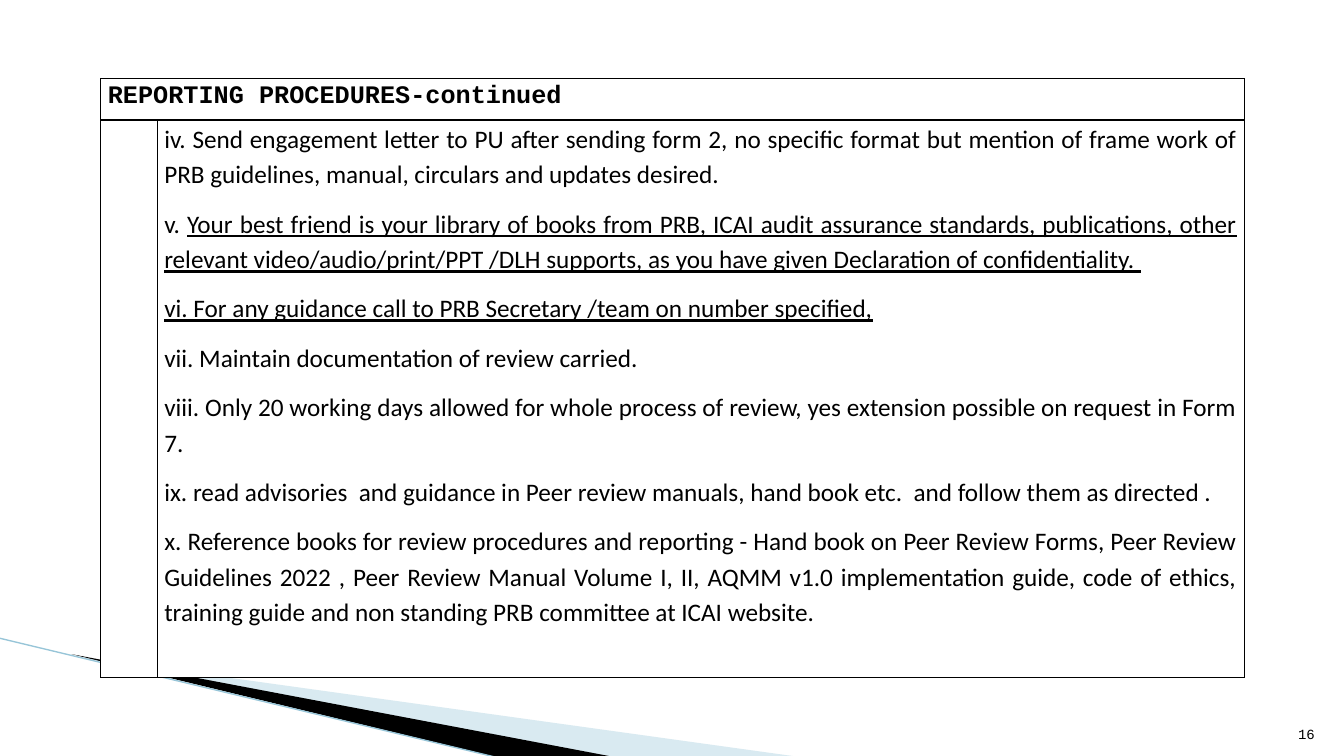
from lxml.etree import SubElement
from pptx import Presentation
from pptx.dml.color import RGBColor
from pptx.enum.shapes import MSO_CONNECTOR
from pptx.enum.text import MSO_ANCHOR, PP_ALIGN
from pptx.oxml.ns import qn
from pptx.util import Inches, Pt

BLACK = RGBColor(0x00, 0x00, 0x00)
WHITE = RGBColor(0xFF, 0xFF, 0xFF)
PALE_BLUE = RGBColor(0xA0, 0xCB, 0xDC)
EDGE_BLUE = RGBColor(0x97, 0xC5, 0xD8)

HEADING = "REPORTING PROCEDURES-continued"
# Each procedure is a plain part followed by an underlined part
PROCEDURES = [
    ("iv. Send engagement letter to PU after sending form 2, no specific format but "
     "mention of frame work of PRB guidelines, manual, circulars and updates desired.", ""),
    ("v. ", "Your best friend is your library of books from PRB, ICAI audit assurance "
     "standards, publications, other relevant video/audio/print/PPT /DLH supports, "
     "as you have given Declaration of confidentiality. "),
    ("", "vi. For any guidance call to PRB Secretary /team on number specified,"),
    ("vii. Maintain documentation of review carried.", ""),
    ("viii. Only 20 working days allowed for whole process of review, yes extension "
     "possible on request in Form 7.", ""),
    ("ix. read advisories  and guidance in Peer review manuals, hand book etc.  and "
     "follow them as directed .", ""),
    ("x. Reference books for review procedures and reporting - Hand book on Peer Review "
     "Forms, Peer Review Guidelines 2022 , Peer Review Manual Volume I, II, AQMM v1.0 "
     "implementation guide, code of ethics, training guide and non standing PRB "
     "committee at ICAI website.", ""),
]


def add_wedge(slide, points, color, opacity=100):
    start, *others = [(Inches(x), Inches(y)) for x, y in points]
    builder = slide.shapes.build_freeform(*start)
    builder.add_line_segments(others, close=True)
    wedge = builder.convert_to_shape()
    wedge.shadow.inherit = False
    wedge.fill.solid()
    wedge.fill.fore_color.rgb = color
    wedge.line.fill.background()
    if opacity < 100:
        color_element = wedge.fill._xPr.find(qn("a:solidFill"))[0]
        SubElement(color_element, qn("a:alpha"), val=str(opacity * 1000))


def add_edge(slide, start, end):
    edge = slide.shapes.add_connector(
        MSO_CONNECTOR.STRAIGHT, *[Inches(value) for value in start + end])
    edge.line.color.rgb = EDGE_BLUE
    edge.line.width = Pt(0.95)
    SubElement(edge._element.spPr, qn("a:effectLst"))


def format_cell(cell):
    properties = cell._tc.get_or_add_tcPr()
    for side in ("lnL", "lnR", "lnT", "lnB"):
        border = SubElement(properties, qn(f"a:{side}"), w=str(Pt(1)))
        fill = SubElement(border, qn("a:solidFill"))
        SubElement(fill, qn("a:srgbClr"), val=str(BLACK))
    cell.fill.solid()
    cell.fill.fore_color.rgb = WHITE
    cell.margin_left = cell.margin_right = Inches(0.07)
    cell.margin_top = cell.margin_bottom = 0


def format_font(font, name, size, bold=False):
    font.name = name
    font.size = Pt(size)
    font.bold = bold
    font.color.rgb = BLACK


def set_spacing(paragraph):
    paragraph.line_spacing = 1.15
    paragraph.space_after = Pt(10)


def write_procedures(cell):
    frame = cell.text_frame
    for index, parts in enumerate(PROCEDURES):
        paragraph = frame.add_paragraph() if index else frame.paragraphs[0]
        paragraph.alignment = PP_ALIGN.JUSTIFY
        set_spacing(paragraph)
        for text, underlined in zip(parts, (False, True)):
            if text:
                run = paragraph.add_run()
                run.text = text
                format_font(run.font, "Calibri", 18)
                run.font.underline = underlined


def add_procedure_table(slide):
    table = slide.shapes.add_table(
        2, 2, Inches(1), Inches(0.78), Inches(11.34), Inches(5.94)).table
    table.first_row = table.horz_banding = False
    for column, width in zip(table.columns, (0.56, 10.78)):
        column.width = Inches(width)
    for row, height in zip(table.rows, (0.41, 5.53)):
        row.height = Inches(height)
    for cell in table.iter_cells():
        format_cell(cell)

    heading = table.cell(0, 0)
    heading.merge(table.cell(0, 1))
    heading.text_frame.text = HEADING
    paragraph = heading.text_frame.paragraphs[0]
    set_spacing(paragraph)
    format_font(paragraph.runs[0].font, "Courier New", 18, bold=True)
    write_procedures(table.cell(1, 1))


def add_page_number(slide, number):
    frame = slide.shapes.add_textbox(
        Inches(12.61), Inches(7.01), Inches(0.53), Inches(0.4)).text_frame
    frame.word_wrap = True
    frame.vertical_anchor = MSO_ANCHOR.BOTTOM
    frame.text = number
    paragraph = frame.paragraphs[0]
    paragraph.alignment = PP_ALIGN.RIGHT
    format_font(paragraph.runs[0].font, "Courier New", 10)


def main():
    presentation = Presentation()
    presentation.slide_width = Inches(13.33)
    presentation.slide_height = Inches(7.5)
    slide = presentation.slides.add_slide(presentation.slide_layouts[6])

    # Corner decoration
    add_wedge(slide, [(0.73, 6.51), (7.93, 7.51), (6.08, 7.51)], PALE_BLUE, opacity=40)
    add_wedge(slide, [(0.71, 6.49), (6.09, 7.51), (4.96, 7.52)], BLACK)
    add_edge(slide, (-0.01, 6.33), (4.95, 7.52))

    # Content
    add_procedure_table(slide)
    add_page_number(slide, "16")
    presentation.save("out.pptx")


if __name__ == "__main__":
    main()
